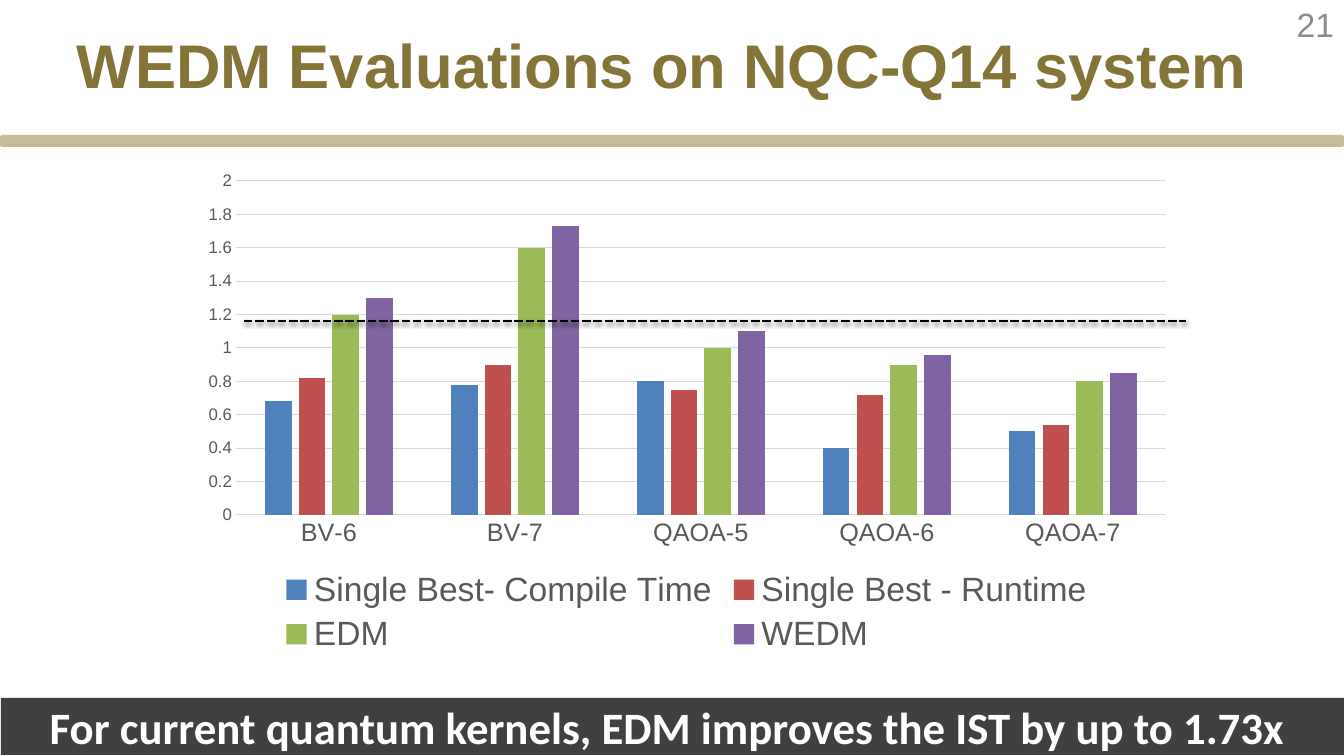
import pptx
import pptx.chart.data
import pptx.dml.color
import pptx.enum.chart
import pptx.enum.dml
import pptx.enum.shapes
import pptx.enum.text
import pptx.oxml
import pptx.util

TITLE = "WEDM Evaluations on NQC-Q14 system"
TAKEAWAY = "For current quantum kernels, EDM improves the IST by up to 1.73x"
SLIDE_NUMBER = "21"
KERNELS = ["BV-6", "BV-7", "QAOA-5", "QAOA-6", "QAOA-7"]
SERIES = [
    ("Single Best- Compile Time", "4F81BD", (0.68, 0.78, 0.8, 0.4, 0.5)),
    ("Single Best - Runtime", "C0504D", (0.82, 0.9, 0.75, 0.72, 0.54)),
    ("EDM", "9BBB59", (1.2, 1.6, 1, 0.9, 0.8)),
    ("WEDM", "8064A2", (1.3, 1.73, 1.1, 0.96, 0.85)),
]
GREY_TEXT, GRID = "595959", "D9D9D9"

# left, top, width, height in px
SLIDE_SIZE = (1344, 756)
RULE_BOX = (0, 135, 1344, 12)
TITLE_BOX = (67, 22, 1205, 126)
TAKEAWAY_BOX = (1, 698, 1343, 57)
CHART_BOX = (187, 162, 999, 498)
PLOT_BOX = (236, 181, 930, 334)
NUMBER_BOX = (1273, 0, 71, 48)
THRESHOLD = (244, 321, 1186, 321)

EMU_PER_PX = 914400 / 100.8
DRAWING_NS = 'xmlns:a="http://schemas.openxmlformats.org/drawingml/2006/main"'
CHART_NS = 'xmlns:c="http://schemas.openxmlformats.org/drawingml/2006/chart"'
SHADOW_XML = (
    f'<a:effectLst {DRAWING_NS}><a:outerShdw blurRad="39370" dist="20320" '
    'dir="5400000" rotWithShape="0"><a:srgbClr val="000000">'
    '<a:alpha val="38000"/></a:srgbClr></a:outerShdw></a:effectLst>')


def px(*lengths):
    return [pptx.util.Emu(round(length * EMU_PER_PX)) for length in lengths]


def color(value):
    return pptx.dml.color.RGBColor.from_string(value)


def set_font(font, size, value, name="Arial", bold=False):
    formats = {"size": pptx.util.Pt(size), "name": name, "bold": bold}
    for key, setting in formats.items():
        setattr(font, key, setting)
    font.color.rgb = color(value)


def set_line(line, value, width):
    line.color.rgb = color(value)
    line.width = pptx.util.Pt(width)


def add_bar(slide, box, fill, corner):
    bar = slide.shapes.add_shape(
        pptx.enum.shapes.MSO_SHAPE.ROUNDED_RECTANGLE, *px(*box))
    bar.adjustments[0] = corner
    bar.shadow.inherit = False
    bar.fill.solid()
    bar.fill.fore_color.rgb = color(fill)
    bar.line.fill.background()
    return bar


def write(shape, text, align, anchor, margins, **font):
    """Fill a shape with one line; margins are left, top, right, bottom px."""
    frame = shape.text_frame
    left, top, right, bottom = px(*margins)
    formats = {
        "word_wrap": True,
        "vertical_anchor": pptx.enum.text.MSO_ANCHOR[anchor],
        "margin_left": left, "margin_top": top,
        "margin_right": right, "margin_bottom": bottom,
    }
    for key, setting in formats.items():
        setattr(frame, key, setting)
    paragraph = frame.paragraphs[0]
    paragraph.alignment = pptx.enum.text.PP_ALIGN[align]
    run = paragraph.add_run()
    run.text = text
    set_font(run.font, **font)


def place_plot(chart):
    """Fix the inner plot area as fractions of the chart box."""
    left, top, width, height = CHART_BOX
    plot_left, plot_top, plot_width, plot_height = PLOT_BOX
    fractions = {
        "x": (plot_left - left) / width, "y": (plot_top - top) / height,
        "w": plot_width / width, "h": plot_height / height,
    }
    parts = '<c:layoutTarget val="inner"/><c:xMode val="edge"/><c:yMode val="edge"/>'
    parts += "".join(f'<c:{key} val="{value:.4f}"/>' for key, value in fractions.items())
    plot_area = chart.plots[0]._element.getparent()
    for layout in plot_area.findall(pptx.oxml.ns.qn("c:layout")):
        plot_area.remove(layout)
    plot_area.insert(0, pptx.oxml.parse_xml(
        f"<c:layout {CHART_NS}><c:manualLayout>{parts}</c:manualLayout></c:layout>"))


def add_kernel_chart(slide):
    data = pptx.chart.data.CategoryChartData()
    data.categories = KERNELS
    for name, _, values in SERIES:
        data.add_series(name, values)
    chart = slide.shapes.add_chart(
        pptx.enum.chart.XL_CHART_TYPE.COLUMN_CLUSTERED, *px(*CHART_BOX), data).chart
    set_font(chart.font, 10, "000000")
    chart.has_title = False

    plot = chart.plots[0]
    for key, setting in {"gap_width": 219, "overlap": -27,
                         "vary_by_categories": False}.items():
        setattr(plot, key, setting)
    for series, (_, fill, _) in zip(plot.series, SERIES):
        series.format.fill.solid()
        series.format.fill.fore_color.rgb = color(fill)

    for axis, size in ((chart.category_axis, 18), (chart.value_axis, 12)):
        axis.major_tick_mark = pptx.enum.chart.XL_TICK_MARK.NONE
        axis.minor_tick_mark = pptx.enum.chart.XL_TICK_MARK.NONE
        set_font(axis.tick_labels.font, size, GREY_TEXT)
    set_line(chart.category_axis.format.line, GRID, 0.75)
    value_axis = chart.value_axis
    for key, setting in {"minimum_scale": 0, "maximum_scale": 2,
                         "major_unit": 0.2, "has_major_gridlines": True}.items():
        setattr(value_axis, key, setting)
    value_axis.format.line.fill.background()
    set_line(value_axis.major_gridlines.format.line, GRID, 0.75)

    chart.has_legend = True
    chart.legend.position = pptx.enum.chart.XL_LEGEND_POSITION.BOTTOM
    chart.legend.include_in_layout = False
    set_font(chart.legend.font, 24, GREY_TEXT)
    place_plot(chart)


def add_threshold(slide):
    line = slide.shapes.add_connector(
        pptx.enum.shapes.MSO_CONNECTOR.STRAIGHT, *px(*THRESHOLD))
    set_line(line.line, "000000", 2)
    line.line.dash_style = pptx.enum.dml.MSO_LINE.SQUARE_DOT
    line._element.spPr.append(pptx.oxml.parse_xml(SHADOW_XML))


def main():
    presentation = pptx.Presentation()
    presentation.slide_width, presentation.slide_height = px(*SLIDE_SIZE)
    slide = presentation.slides.add_slide(presentation.slide_layouts[6])

    add_bar(slide, RULE_BOX, "C4BD97", 0.17)
    write(slide.shapes.add_textbox(*px(*TITLE_BOX)), TITLE, "LEFT", "TOP",
          (10, 5, 0, 5), size=44, value="857437", bold=True)
    write(add_bar(slide, TAKEAWAY_BOX, "404040", 0), TAKEAWAY, "CENTER", "MIDDLE",
          (10, 5, 20, 5), size=32, value="FFFFFF", name="Calibri", bold=True)
    add_kernel_chart(slide)
    add_threshold(slide)
    write(slide.shapes.add_textbox(*px(*NUMBER_BOX)), SLIDE_NUMBER, "RIGHT", "MIDDLE",
          (10, 5, 10, 5), size=24, value="8C8C8C")
    presentation.save("out.pptx")


if __name__ == "__main__":
    main()
